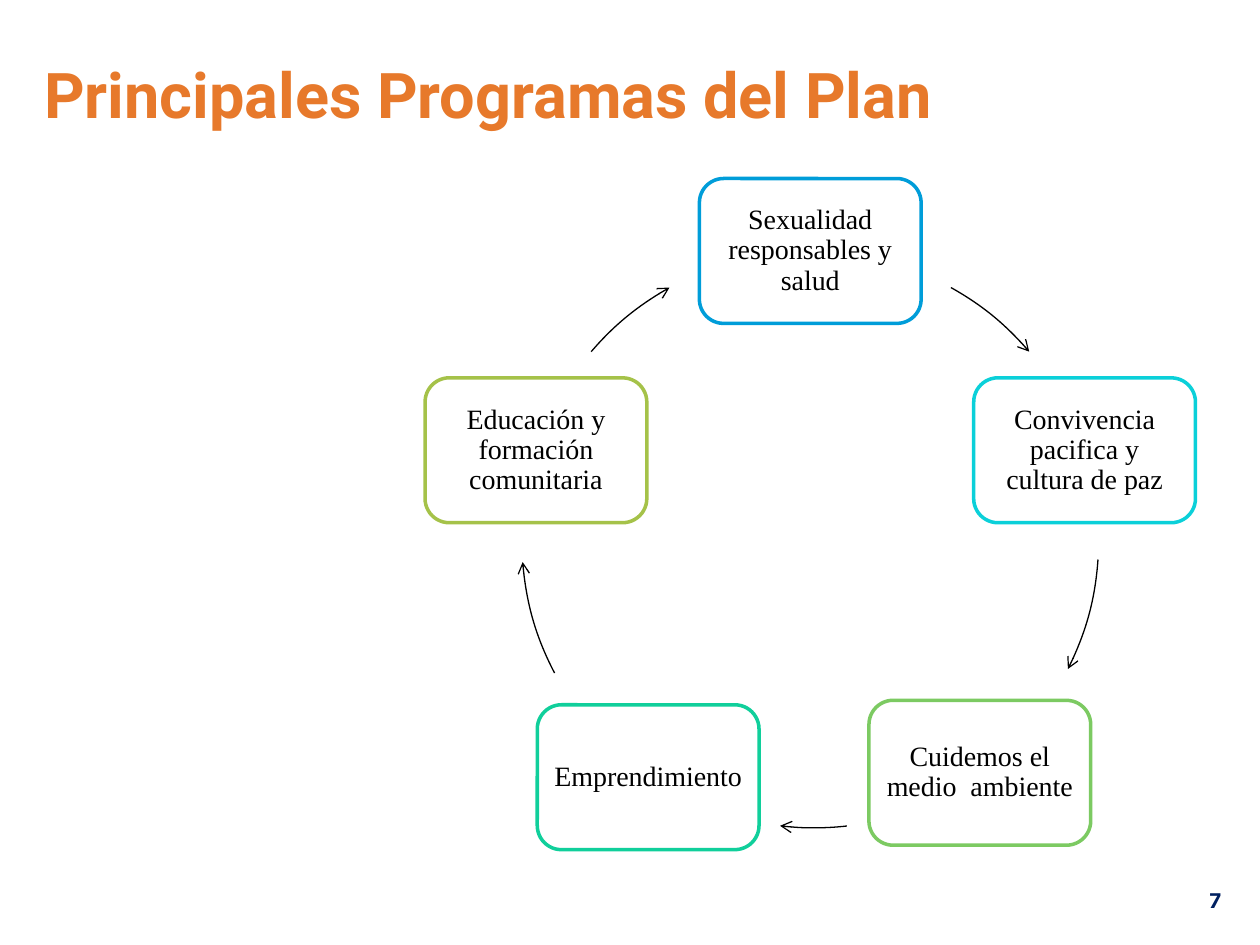
from math import cos, radians, sin

from lxml.etree import SubElement
from pptx import Presentation
from pptx.dml.color import RGBColor
from pptx.enum.shapes import MSO_SHAPE as Shape
from pptx.enum.text import MSO_ANCHOR as Anchor, PP_ALIGN as Align
from pptx.oxml.ns import qn
from pptx.util import Cm, Pt

WHITE = RGBColor(0xFF, 0xFF, 0xFF)
BLACK = RGBColor(0x00, 0x00, 0x00)
ORANGE = RGBColor(0xE7, 0x79, 0x2B)
NAVY = RGBColor(0x00, 0x20, 0x60)
BLUE = RGBColor(0x00, 0x9D, 0xD9)
CYAN = RGBColor(0x0B, 0xD0, 0xD9)
GREEN = RGBColor(0x7C, 0xCA, 0x62)
TEAL = RGBColor(0x10, 0xCF, 0x9B)
OLIVE = RGBColor(0xA5, 0xC2, 0x49)

NODE_WIDTH, NODE_HEIGHT = 4.47, 2.92
STEP = 72
PROGRAMS = [
    ("Sexualidad responsables y salud", BLUE, (0, 0)),
    ("Convivencia pacifica y cultura de paz", CYAN, (0, 0)),
    ("Cuidemos el medio  ambiente", GREEN, (0, 0)),
    ("Emprendimiento", TEAL, (0.15, 0.09)),
    ("Educación y formación comunitaria", OLIVE, (0, 0)),
]
ARROWS = [(299.2, 319.4, 0), (4, 26.7, 0), (83.5, 96.8, 0.08), (152.4, 175.5, 0), (220.6, 240.8, 0)]


def write_text(shape, text, font, size, color, bold=False, align=Align.LEFT,
               anchor=Anchor.TOP, margin=0.25, spacing=1.0):
    frame = shape.text_frame
    frame.word_wrap = True
    frame.vertical_anchor = anchor
    frame.margin_left = frame.margin_right = Cm(margin)
    frame.margin_top = frame.margin_bottom = Cm(margin)
    frame.text = text
    paragraph = frame.paragraphs[0]
    paragraph.alignment = align
    paragraph.line_spacing = spacing
    run_font = paragraph.runs[0].font
    run_font.name, run_font.size, run_font.bold = font, Pt(size), bold
    run_font.color.rgb = color


def place_title(slide, left, top, width, height):
    title = slide.shapes.title
    title.left, title.top, title.width, title.height = Cm(left), Cm(top), Cm(width), Cm(height)
    write_text(title, "Principales Programas del Plan", "Roboto", 36, ORANGE,
               bold=True, anchor=Anchor.BOTTOM)


def add_page_number(slide, left, top, width, height):
    box = slide.shapes.add_textbox(Cm(left), Cm(top), Cm(width), Cm(height))
    write_text(box, "7", "Karla", 13, NAVY, bold=True, align=Align.RIGHT)


def add_node(slide, center_x, center_y, text, color):
    node = slide.shapes.add_shape(
        Shape.ROUNDED_RECTANGLE, Cm(center_x - NODE_WIDTH / 2), Cm(center_y - NODE_HEIGHT / 2),
        Cm(NODE_WIDTH), Cm(NODE_HEIGHT))
    node.shadow.inherit = False
    node.fill.solid()
    node.fill.fore_color.rgb = WHITE
    node.line.color.rgb = color
    node.line.width = Pt(2)
    write_text(node, text, "Times New Roman", 16, BLACK, align=Align.CENTER,
               anchor=Anchor.MIDDLE, margin=0.17, spacing=0.9)


def add_arc_arrow(slide, left, top, diameter, start, end):
    arc = slide.shapes.add_shape(Shape.ARC, Cm(left), Cm(top), Cm(diameter), Cm(diameter))
    arc.shadow.inherit = False
    arc.fill.background()
    arc.adjustments[0] = start * 0.6
    arc.adjustments[1] = end * 0.6
    arc.line.color.rgb = BLACK
    arc.line.width = Pt(0.75)
    SubElement(arc.line._get_or_add_ln(), qn("a:tailEnd"), type="arrow")


def add_cycle(slide, left, top, diameter):
    radius = diameter / 2
    for index, (text, color, (shift_x, shift_y)) in enumerate(PROGRAMS):
        angle = radians(index * STEP - 90)
        add_node(slide, left + radius * (1 + cos(angle)) + shift_x,
                 top + radius * (1 + sin(angle)) + shift_y, text, color)
    for start, end, shift in ARROWS:
        add_arc_arrow(slide, left + shift, top, diameter, start, end)


def main():
    presentation = Presentation()
    presentation.slide_width, presentation.slide_height = Cm(25.4), Cm(19.05)
    slide = presentation.slides.add_slide(presentation.slide_layouts[5])
    place_title(slide, 0.64, 0.71, 19.69, 2.18)
    add_cycle(slide, 10.52, 5.06, 11.63)
    add_page_number(slide, 23.34, 17.6, 1.52, 1.45)
    presentation.save("out.pptx")


if __name__ == "__main__":
    main()
